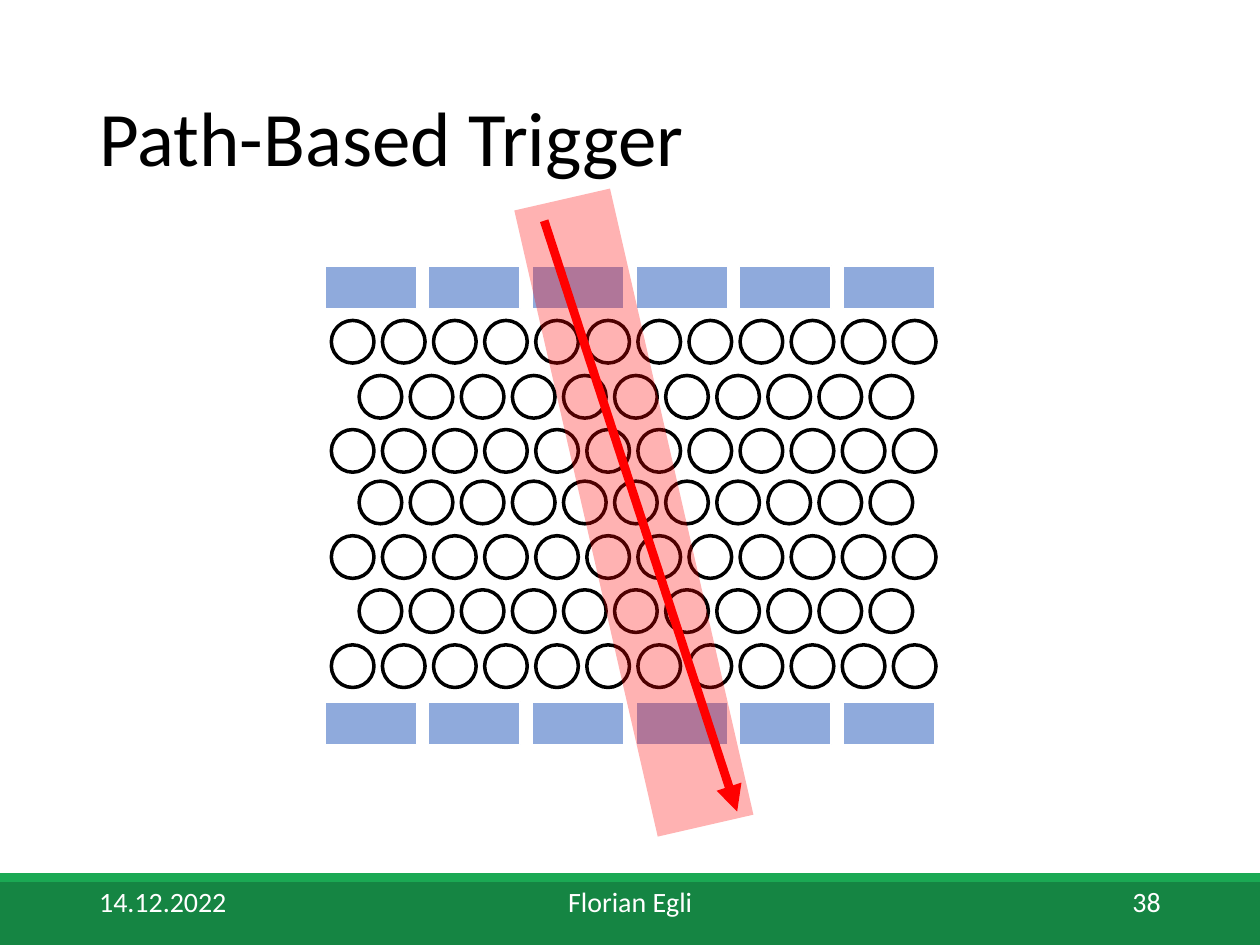
from lxml import etree
from pptx import Presentation
from pptx import util as u
from pptx.dml.color import RGBColor
from pptx.enum import shapes, text
from pptx.oxml.ns import qn

RECT, OVAL = shapes.MSO_SHAPE.RECTANGLE, shapes.MSO_SHAPE.OVAL
LEFT, CENTER, RIGHT = text.PP_ALIGN.LEFT, text.PP_ALIGN.CENTER, text.PP_ALIGN.RIGHT

prs = Presentation()
prs.slide_width, prs.slide_height = u.Cm(25.4), u.Cm(19.05)
s = prs.slides.add_slide(prs.slide_layouts[5])


def add_shape(kind, box, fill, line=None, width=1):
    sp = s.shapes.add_shape(kind, *map(u.Cm, box))
    sp.shadow.inherit = False
    sp.fill.solid()
    sp.fill.fore_color.rgb = RGBColor.from_string(fill)
    if line:
        sp.line.color.rgb = RGBColor.from_string(line)
        sp.line.width = u.Pt(width)
    else:
        sp.line.fill.background()
    return sp


def set_text(sp, words, size, color, align):
    tf = sp.text_frame
    frame = {"word_wrap": True, "auto_size": text.MSO_AUTO_SIZE.NONE,
             "vertical_anchor": text.MSO_ANCHOR.MIDDLE}
    for name, value in frame.items():
        setattr(tf, name, value)
    p = tf.paragraphs[0]
    p.alignment = align
    r = p.add_run()
    r.text = words
    for name, value in {"name": "Calibri", "size": u.Pt(size)}.items():
        setattr(r.font, name, value)
    r.font.color.rgb = RGBColor.from_string(color)
    return p


# Title
title = s.shapes.title
place = {"left": 1.75, "top": 1.02, "width": 21.9, "height": 3.68}
for name, value in place.items():
    setattr(title, name, u.Cm(value))
set_text(title, "Path-Based Trigger", 44, "000000", LEFT).line_spacing = 0.9

# Footer band and its three texts
add_shape(RECT, (0, 17.78, 25.4, 1.27), "158543")
add_shape(RECT, (0, 17.6, 25.4, 0.18), "1BA954")
for words, left, width, align in (("14.12.2022", 1.75, 5.72, LEFT),
                                  ("Florian Egli", 8.41, 8.59, CENTER),
                                  ("38", 17.93, 5.72, RIGHT)):
    sp = s.shapes.add_textbox(u.Cm(left), u.Cm(17.65), u.Cm(width), u.Cm(1.02))
    set_text(sp, words, 16, "FFFFFF", align)

# Detector plates above and below the tubes
for top in (5.36, 14.15):
    for col in range(6):
        add_shape(RECT, (6.55 + 2.09 * col, top, 1.85, 0.86), "8FAADC", "FFFFFF")

# Staggered tube layers: 12 and 11 tubes in turn
for row, top in enumerate((6.46, 7.57, 8.66, 9.7, 10.8, 11.89, 13)):
    left, count = (7.24, 11) if row % 2 else (6.68, 12)
    for col in range(count):
        add_shape(OVAL, (left + 1.03 * col, top, 0.86, 0.86), "FFFFFF", "000000", 2)

# Particle track
track = s.shapes.add_connector(shapes.MSO_CONNECTOR.STRAIGHT,
                               *map(u.Cm, (10.97, 4.45, 14.86, 16.36)))
track.line.color.rgb = RGBColor.from_string("FF0000")
track.line.width = u.Pt(5)
etree.SubElement(track.line._get_or_add_ln(), qn("a:tailEnd"), type="triangle")
etree.SubElement(track._element.spPr, qn("a:effectLst"))

# Translucent trigger path around the track
path_band = add_shape(RECT, (11.79, 3.86, 1.98, 12.95), "FF0000")
path_band.rotation = 347.1
color = path_band._element.spPr.find(qn("a:solidFill")).find(qn("a:srgbClr"))
etree.SubElement(color, qn("a:alpha"), val="30000")

prs.save("out.pptx")
